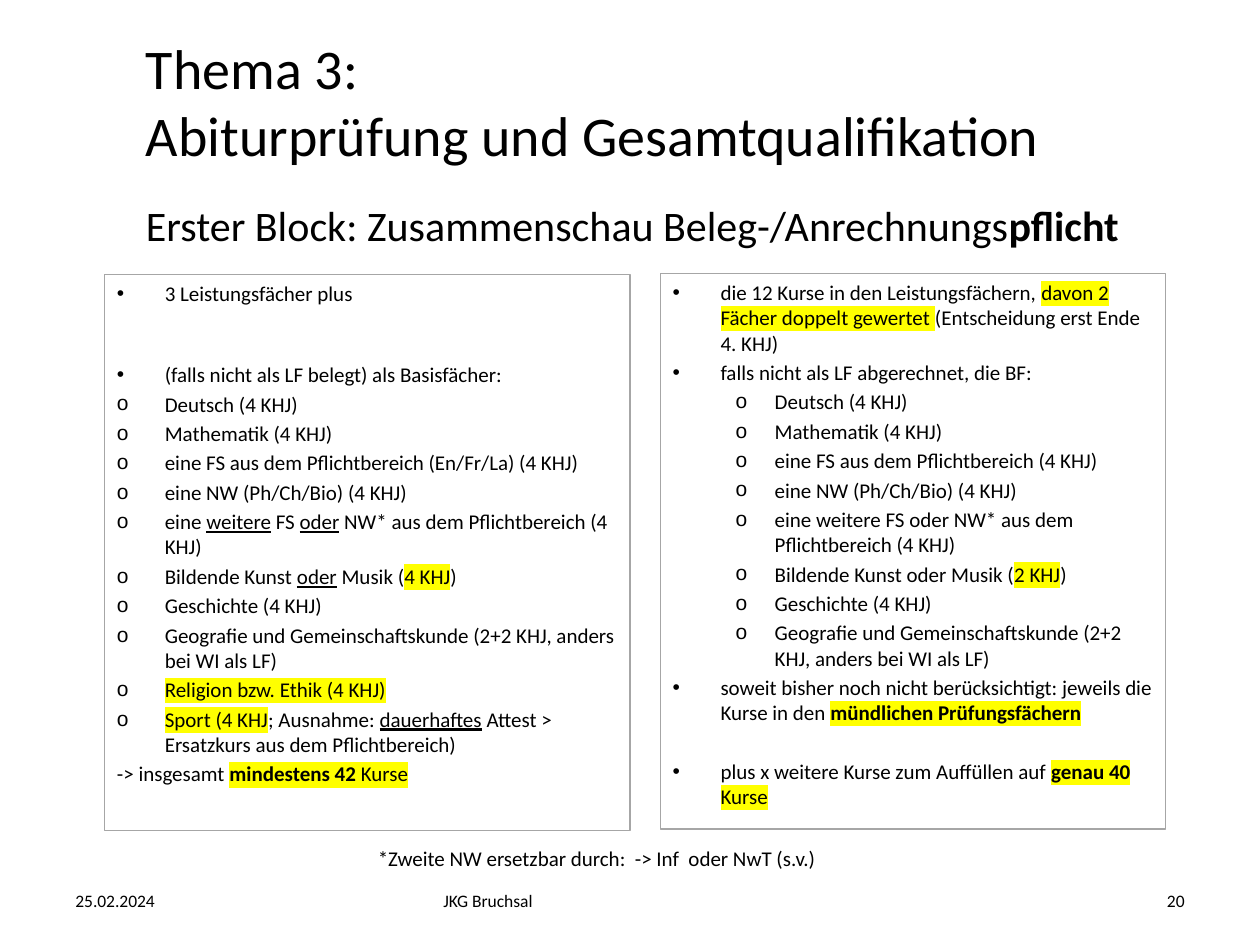
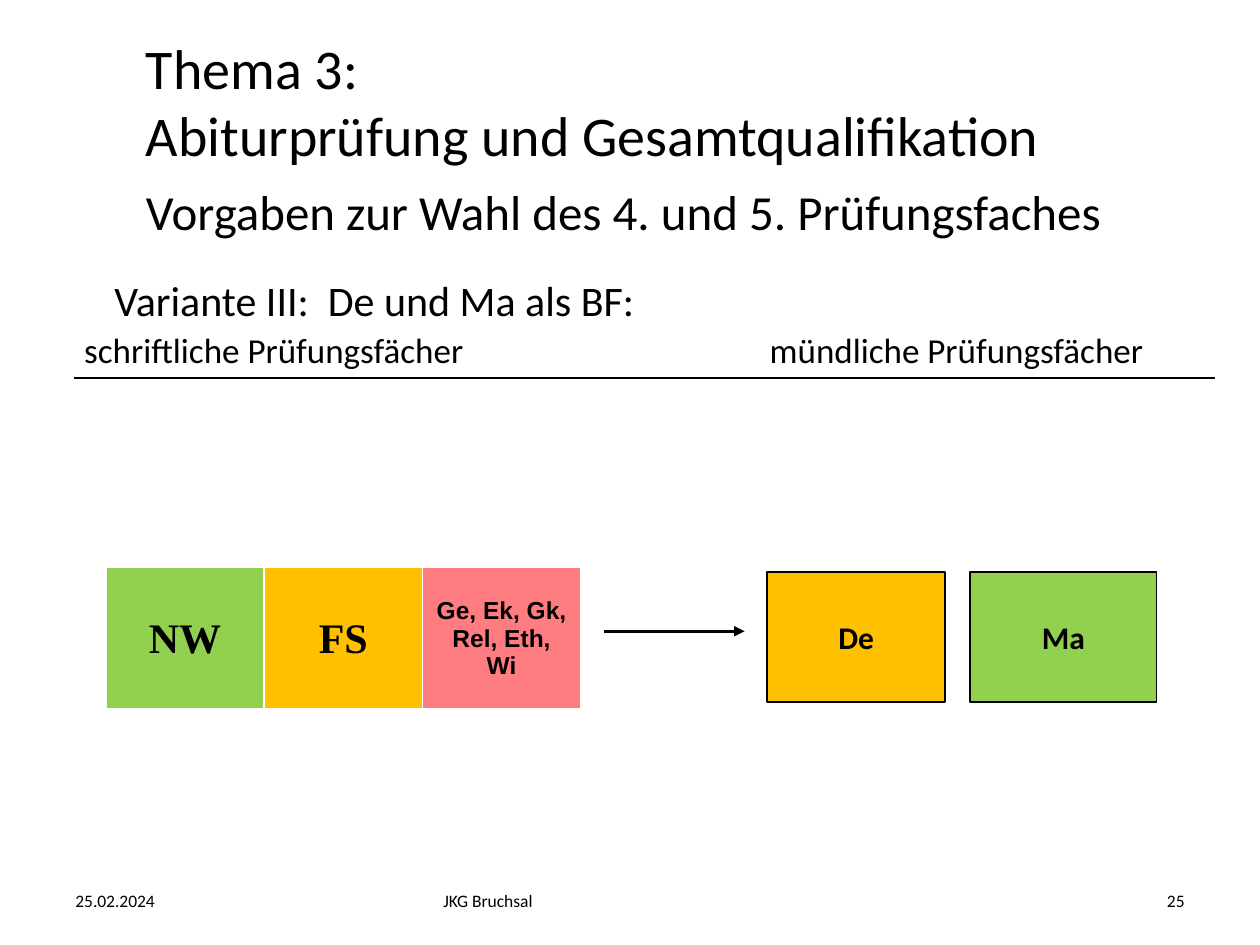
import dataclasses

import pptx
import pptx.dml.color
import pptx.enum.shapes
import pptx.enum.text
import pptx.oxml
import pptx.oxml.ns
import pptx.util

# Grid: 100 columns by 75 rows on a 10 x 7.5 inch slide
COLS, ROWS = 100, 75
CELL = pptx.util.Inches(0.1)

COLORS = {
    "text": "000000", "frame": "A6A6A6", "marker": "FFFF00", "cell_edge": "FFFFFF",
    "science": "92D050", "language": "FFC000", "society": "FF7C80",
}
FONT = "Calibri"
ALIGN = pptx.enum.text.PP_ALIGN
ANCHOR = pptx.enum.text.MSO_ANCHOR
TITLE = "Thema 3: \nAbiturprüfung und Gesamtqualifikation"
DATE, SCHOOL = "25.02.2024", "JKG Bruchsal"
qn = pptx.oxml.ns.qn


@dataclasses.dataclass
class Box:
    """Region in grid columns and rows."""
    col: float
    row: float
    cols: float
    rows: float

    def area(self, col, row, cols, rows):
        return Box(self.col + col, self.row + row, cols, rows)

    def emu(self):
        return [round(v * CELL) for v in (self.col, self.row, self.cols, self.rows)]


SLIDE = Box(0, 0, COLS, ROWS)
HEADING = SLIDE.area(10.6, 2.1, 84.4, 11.8)
FOOTER = SLIDE.area(5, 69.5, 90, 4)

# Texts: a list of (text, marks); b = bold, u = underlined, h = highlighted
OBLIGATORY = [
    ("•", 0, [("3 Leistungsfächer plus", "")]),
    ("•", 29.4, [("(falls nicht als LF belegt) als Basisfächer:", "")]),
    ("o", 0, [("Deutsch (4 KHJ)", "")]),
    ("o", 0, [("Mathematik (4 KHJ)", "")]),
    ("o", 0, [("eine FS aus dem Pflichtbereich (En/Fr/La) (4 KHJ)", "")]),
    ("o", 0, [("eine NW (Ph/Ch/Bio) (4 KHJ)", "")]),
    ("o", 0, [("eine ", ""), ("weitere", "u"), (" FS ", ""), ("oder", "u"),
              (" NW* aus dem Pflichtbereich (4 KHJ)", "")]),
    ("o", 0, [("Bildende Kunst ", ""), ("oder", "u"), (" Musik (", ""),
              ("4 KHJ", "h"), (")", "")]),
    ("o", 0, [("Geschichte (4 KHJ)", "")]),
    ("o", 0, [("Geografie und Gemeinschaftskunde (2+2 KHJ, anders bei WI als LF)", "")]),
    ("o", 0, [("Religion bzw. Ethik (4 KHJ)", "h")]),
    ("o", 0, [("Sport (4 KHJ", "h"), ("; Ausnahme: ", ""), ("dauerhaftes", "u"),
              (" Attest > Ersatzkurs aus dem Pflichtbereich)", "")]),
    ("", 0, [("-> insgesamt ", ""), ("mindestens 42 ", "bh"), ("Kurse", "h")]),
]
CREDITED = [
    ("•", 0, [("die 12 Kurse in den Leistungsfächern, ", ""),
              ("davon 2 Fächer doppelt gewertet ", "h"),
              ("(Entscheidung erst Ende 4. KHJ)", "")]),
    ("•", 0, [("falls nicht als LF abgerechnet, die BF:", "")]),
    ("o", 0, [("Deutsch (4 KHJ)", "")]),
    ("o", 0, [("Mathematik (4 KHJ)", "")]),
    ("o", 0, [("eine FS aus dem Pflichtbereich (4 KHJ)", "")]),
    ("o", 0, [("eine NW (Ph/Ch/Bio) (4 KHJ)", "")]),
    ("o", 0, [("eine weitere FS oder NW* aus dem Pflichtbereich (4 KHJ)", "")]),
    ("o", 0, [("Bildende Kunst oder Musik (", ""), ("2 KHJ", "h"), (")", "")]),
    ("o", 0, [("Geschichte (4 KHJ)", "")]),
    ("o", 0, [("Geografie und Gemeinschaftskunde (2+2 KHJ, anders bei WI als LF)", "")]),
    ("•", 0, [("soweit bisher noch nicht berücksichtigt: jeweils die Kurse in den ", ""),
              ("mündlichen Prüfungsfächern", "bh")]),
    ("•", 16.8, [("plus x weitere Kurse zum Auffüllen auf ", ""),
                 ("genau 40 ", "bh"), ("Kurse", "h")]),
]
WRITTEN = [
    ("NW", "science", 24, "Times New Roman"),
    ("FS", "language", 24, "Times New Roman"),
    ("Ge, Ek, Gk,\nRel, Eth, Wi", "society", 14, "Arial"),
]
# Oral subjects: name, colour, column offset, columns
ORAL = [("De", "language", 0, 14.1), ("Ma", "science", 16.1, 14.8)]


def rgb(key):
    return pptx.dml.color.RGBColor.from_string(COLORS[key])


def add_xml(parent, tag, **attributes):
    child = parent.makeelement(qn(tag), attributes)
    parent.append(child)
    return child


def add_runs(paragraph, runs, size, font=FONT):
    for text, marks in runs:
        for i, line in enumerate(text.split("\n")):
            if i:
                paragraph.add_line_break()
            run = paragraph.add_run()
            run.text = line
            run.font.size = pptx.util.Pt(size)
            run.font.name = font
            run.font.color.rgb = rgb("text")
            run.font.bold = "b" in marks
            run.font.underline = "u" in marks
            if "h" in marks:
                properties = run._r.get_or_add_rPr()
                highlight = add_xml(properties, "a:highlight")
                add_xml(highlight, "a:srgbClr", val=COLORS["marker"])
                properties.find(qn("a:solidFill")).addnext(highlight)


def add_text(slide, box, runs, size, anchor=ANCHOR.TOP, align=ALIGN.LEFT):
    frame = slide.shapes.add_textbox(*box.emu()).text_frame
    frame.word_wrap = True
    frame.vertical_anchor = anchor
    paragraph = frame.paragraphs[0]
    paragraph.alignment = align
    add_runs(paragraph, runs, size)
    return paragraph


def add_rectangle(slide, box, fill, edge, width, anchor):
    rectangle = slide.shapes.add_shape(
        pptx.enum.shapes.MSO_SHAPE.RECTANGLE, *box.emu())
    rectangle.shadow.inherit = False
    if fill:
        rectangle.fill.solid()
        rectangle.fill.fore_color.rgb = rgb(fill)
    else:
        rectangle.fill.background()
    rectangle.line.color.rgb = rgb(edge)
    rectangle.line.width = pptx.util.Pt(width)
    frame = rectangle.text_frame
    frame.word_wrap = True
    frame.vertical_anchor = anchor
    return frame


def add_rule(slide, box, width, arrow=False):
    left, top, length, _ = box.emu()
    rule = slide.shapes.add_connector(
        pptx.enum.shapes.MSO_CONNECTOR.STRAIGHT, left, top, left + length, top)
    rule.line.color.rgb = rgb("text")
    rule.line.width = pptx.util.Pt(width)
    if arrow:
        add_xml(rule.line._get_or_add_ln(), "a:tailEnd", type="triangle")
    add_xml(rule._element.spPr, "a:effectLst")


# Heading and footer shared by all slides
def add_frame(deck, number):
    slide = deck.slides.add_slide(deck.slide_layouts[6])
    add_text(slide, HEADING, [(TITLE, "")], 32, ANCHOR.MIDDLE)
    for text, col, cols, align in [(DATE, 0, 23.3, ALIGN.LEFT),
                                   (SCHOOL, 29.2, 31.7, ALIGN.LEFT),
                                   (str(number), 66.7, 23.3, ALIGN.RIGHT)]:
        add_text(slide, FOOTER.area(col, 0, cols, FOOTER.rows), [(text, "")], 10,
                 ANCHOR.MIDDLE, align)
    return slide


# Framed course list; sub_indent holds left margin and hanging indent of "o" items
def add_course_list(slide, box, courses, sub_indent):
    frame = add_rectangle(slide, box, None, "frame", 0.75, ANCHOR.TOP)
    indents = {"•": (3.8, 3.8), "o": sub_indent, "": (0, 0)}
    for i, (bullet, extra_gap, runs) in enumerate(courses):
        paragraph = frame.add_paragraph() if i else frame.paragraphs[0]
        paragraph.alignment = ALIGN.LEFT
        paragraph.space_before = pptx.util.Pt(2.4 + extra_gap)
        margin, hanging = indents[bullet]
        properties = paragraph._p.get_or_add_pPr()
        properties.set("marL", str(round(margin * CELL)))
        properties.set("indent", str(round(-hanging * CELL)))
        if bullet:
            add_xml(properties, "a:buFont", typeface="Arial")
            add_xml(properties, "a:buChar", char=bullet)
        add_runs(paragraph, runs, 12)


def add_comparison_slide(deck):
    slide = add_frame(deck, 20)
    add_text(slide, SLIDE.area(10.6, 13.9, 84.4, 7.8),
             [("Erster Block: Zusammenschau Beleg-/Anrechnungs", ""), ("pflicht", "b")],
             24, ANCHOR.MIDDLE)
    add_course_list(slide, SLIDE.area(8.3, 21.8, 41.7, 44.1), OBLIGATORY, (3.8, 3.8))
    add_course_list(slide, SLIDE.area(52.4, 21.7, 40.1, 44.1), CREDITED, (8.1, 3.1))
    add_text(slide, SLIDE.area(29, 66.6, 50, 3),
             [("*Zweite NW ersetzbar durch:  -> Inf  oder NwT (s.v.)", "")], 12)


# Written subjects as a one-row table
def add_written_subjects(slide, box):
    table = slide.shapes.add_table(1, len(WRITTEN), *box.emu()).table
    table.first_row = table.horz_banding = False
    for i, (subject, color, size, font) in enumerate(WRITTEN):
        cell = table.cell(0, i)
        cell.fill.solid()
        cell.fill.fore_color.rgb = rgb(color)
        cell.vertical_anchor = ANCHOR.MIDDLE
        paragraph = cell.text_frame.paragraphs[0]
        paragraph.alignment = ALIGN.CENTER
        add_runs(paragraph, [(subject, "b")], size, font)
        properties = cell._tc.get_or_add_tcPr()
        for order, (side, width) in enumerate([("L", 1), ("R", 1), ("T", 1), ("B", 3)]):
            edge = add_xml(properties, f"a:ln{side}", w=str(pptx.util.Pt(width)))
            add_xml(add_xml(edge, "a:solidFill"), "a:srgbClr", val=COLORS["cell_edge"])
            properties.insert(order, edge)


def add_oral_subjects(slide, box):
    for subject, color, col, cols in ORAL:
        frame = add_rectangle(slide, box.area(col, 0, cols, box.rows), color, "text", 1,
                              ANCHOR.MIDDLE)
        frame.paragraphs[0].alignment = ALIGN.CENTER
        add_runs(frame.paragraphs[0], [(subject, "b")], 18)


# Column heads on one line, parted by a tab stop, over a rule
def add_column_heads(slide, box):
    heads = add_text(slide, box,
                     [("schriftliche Prüfungsfächer\tmündliche Prüfungsfächer", "")], 20)
    heads.space_before = pptx.util.Pt(4)
    tabs = add_xml(heads._p.get_or_add_pPr(), "a:tabLst")
    add_xml(tabs, "a:tab", pos=str(round(54.4 * CELL)), algn="l")
    add_rule(slide, box.area(0.2, box.rows, 90.5, 0), 1.5)


def add_variant_slide(deck):
    slide = add_frame(deck, 25)
    add_text(slide, SLIDE.area(10.6, 13.9, 81.2, 8),
             [("Vorgaben zur Wahl des 4. und 5. Prüfungsfaches", "")], 28)
    add_text(slide, SLIDE.area(8.1, 21.3, 85, 5),
             [("Variante III:  De und Ma als BF:", "")], 24)
    add_column_heads(slide, SLIDE.area(5.7, 25.6, 90.6, 4.4))
    add_written_subjects(slide, SLIDE.area(8.4, 45, 37.7, 11.4))
    add_rule(slide, SLIDE.area(47.9, 50.1, 11.2, 0), 1.75, arrow=True)
    add_oral_subjects(slide, SLIDE.area(60.9, 45.4, 30.9, 10.3))


def main():
    deck = pptx.Presentation()
    deck.slide_width, deck.slide_height = COLS * CELL, ROWS * CELL
    add_comparison_slide(deck)
    add_variant_slide(deck)
    deck.save("out.pptx")


if __name__ == "__main__":
    main()
